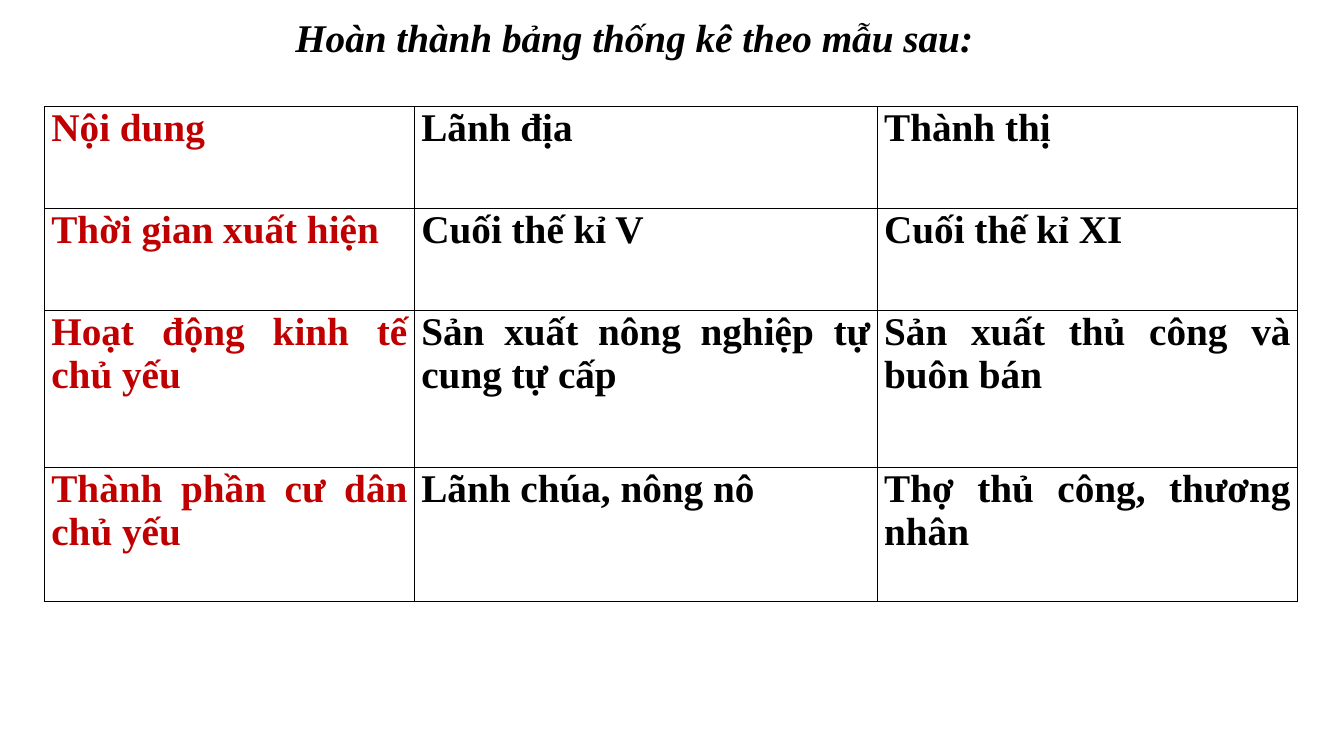
"""Build a slide with a table comparing manors and towns."""
from dataclasses import dataclass

from lxml.etree import SubElement
from pptx import Presentation
from pptx.dml.color import RGBColor
from pptx.enum.text import MSO_ANCHOR as Anchor, PP_ALIGN as Align
from pptx.oxml.ns import qn
from pptx.util import Inches, Pt

BLACK = RGBColor(0x00, 0x00, 0x00)
RED = RGBColor(0xC0, 0x00, 0x00)
FONT = "Times New Roman"
COLUMN_WIDTHS = (3.67, 4.59, 4.17)


@dataclass
class TableRow:
    height: float
    texts: tuple[str, str, str]


ROWS = (
    TableRow(1.01, ("Nội dung", "Lãnh địa", "Thành thị")),
    TableRow(1.01, ("Thời gian xuất hiện", "Cuối thế kỉ V", "Cuối thế kỉ XI")),
    TableRow(1.56, ("Hoạt động kinh tế chủ yếu",
                    "Sản xuất nông nghiệp tự cung tự cấp",
                    "Sản xuất thủ công và buôn bán")),
    TableRow(1.33, ("Thành phần cư dân chủ yếu", "Lãnh chúa, nông nô",
                    "Thợ thủ công, thương nhân")),
)


def write_text(text_frame, text: str, *, color: RGBColor = BLACK,
               align: Align = Align.LEFT, italic: bool = False) -> None:
    paragraph = text_frame.paragraphs[0]
    paragraph.alignment = align
    run = paragraph.add_run()
    run.text = text
    font = run.font
    font.name, font.size = FONT, Pt(28)
    font.bold, font.italic = True, italic
    font.color.rgb = color


def add_borders(cell, color: RGBColor, width: float) -> None:
    properties = cell._tc.get_or_add_tcPr()
    for side in ("lnL", "lnR", "lnT", "lnB"):
        line = SubElement(properties, qn(f"a:{side}"), w=str(Pt(width)))
        fill = SubElement(line, qn("a:solidFill"))
        SubElement(fill, qn("a:srgbClr"), val=str(color))


def add_title(slide, text: str) -> None:
    shape = slide.shapes.add_textbox(Inches(2.83), Inches(0.08),
                                     Inches(15.49), Inches(0.57))
    shape.text_frame.word_wrap = True
    shape.text_frame.vertical_anchor = Anchor.MIDDLE
    write_text(shape.text_frame, text, italic=True)


def add_comparison(slide, rows: tuple[TableRow, ...]) -> None:
    shape = slide.shapes.add_table(
        len(rows), len(COLUMN_WIDTHS), Inches(0.44), Inches(1.06),
        Inches(sum(COLUMN_WIDTHS)), Inches(sum(row.height for row in rows)))
    table = shape.table
    table.first_row = table.horz_banding = False
    for column, width in zip(table.columns, COLUMN_WIDTHS):
        column.width = Inches(width)
    for row_index, row in enumerate(rows):
        table.rows[row_index].height = Inches(row.height)
        for column_index, text in enumerate(row.texts):
            cell = table.cell(row_index, column_index)
            cell.margin_left = cell.margin_right = Inches(0.07)
            cell.margin_top = cell.margin_bottom = 0
            add_borders(cell, BLACK, 1)
            cell.fill.background()
            write_text(cell.text_frame, text, align=Align.JUSTIFY,
                       color=BLACK if column_index else RED)


def main() -> None:
    presentation = Presentation()
    presentation.slide_width = Inches(13.33)
    presentation.slide_height = Inches(7.5)
    slide = presentation.slides.add_slide(presentation.slide_layouts[6])
    add_title(slide, "Hoàn thành bảng thống kê theo mẫu sau:")
    add_comparison(slide, ROWS)
    presentation.save("out.pptx")


if __name__ == "__main__":
    main()
